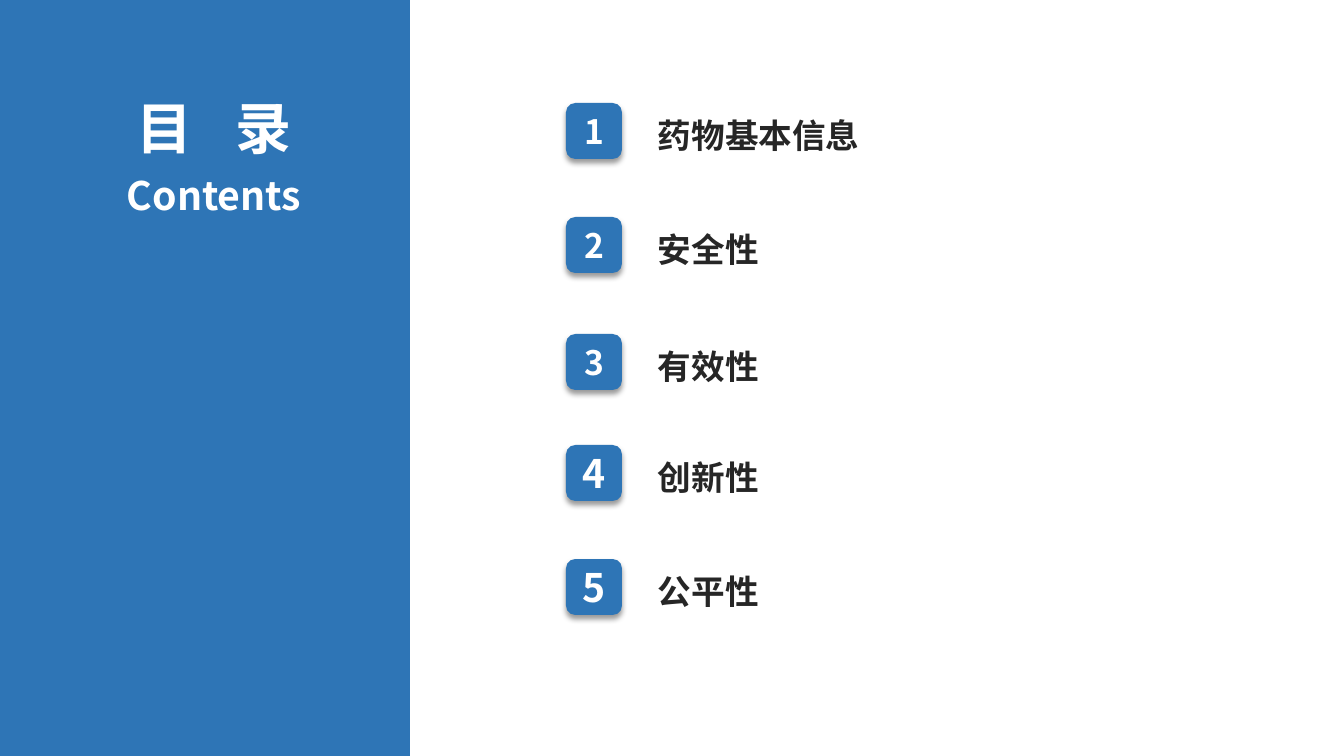
from lxml import etree
from pptx import Presentation, util as u
from pptx.dml.color import RGBColor
from pptx.enum import shapes, text
from pptx.oxml import parse_xml
from pptx.oxml.ns import nsdecls, qn

BLUE, WHITE, INK = "2E75B6", "FFFFFF", "262626"
CJK_FONT = "Noto Sans CJK SC"
SHADOW = f"""<a:effectLst {nsdecls("a")}>
  <a:outerShdw blurRad="50800" dist="38100" dir="5400000" algn="t" rotWithShape="0">
    <a:srgbClr val="000000"><a:alpha val="40000"/></a:srgbClr>
  </a:outerShdw>
</a:effectLst>"""


def px(*lengths):
    return [u.Inches(length / 100.8) for length in lengths]


def style_text(holder, size, color, align, font=CJK_FONT):
    frame = holder.text_frame
    frame.word_wrap = True
    frame.auto_size = text.MSO_AUTO_SIZE.NONE
    frame.vertical_anchor = text.MSO_ANCHOR.MIDDLE
    paragraph = frame.paragraphs[0]
    paragraph.alignment = align
    for run in paragraph.runs:
        run.font.name = font
        run.font.size = u.Pt(size)
        run.font.bold = True
        run.font.color.rgb = RGBColor.from_string(color)
        east_asian = etree.Element(qn("a:ea"), typeface=CJK_FONT)
        run.font._element.find(qn("a:latin")).addnext(east_asian)


prs = Presentation()
prs.slide_width, prs.slide_height = px(1344, 756)
slide = prs.slides.add_slide(prs.slide_layouts[5])
CENTER, LEFT = text.PP_ALIGN.CENTER, text.PP_ALIGN.LEFT

# Blue side panel with the heading in two languages
panel = slide.shapes.add_shape(shapes.MSO_SHAPE.RECTANGLE, *px(0, 0, 410, 756))
panel.shadow.inherit = False
panel.fill.solid()
panel.fill.fore_color.rgb = RGBColor.from_string(BLUE)
panel.line.fill.background()

heading = slide.shapes.title
panel._element.addnext(heading._element)  # the heading lies above the panel
heading.left, heading.top, heading.width, heading.height = px(40, 103, 348, 49)
for part in ("目 ", "录"):
    heading.text_frame.paragraphs[0].add_run().text = part
style_text(heading, 40, WHITE, CENTER, "Arial")
# Letter spacing widens the gap between the two characters
heading.text_frame.paragraphs[0].runs[0].font._element.set("spc", "1100")

subheading = slide.shapes.add_textbox(*px(40, 170, 348, 49))
subheading.text_frame.text = "Contents"
style_text(subheading, 28, WHITE, CENTER)

# Chapters: badge top, number size, name
chapters = [
    (103, 24, "药物基本信息"),
    (217, 24, "安全性"),
    (334, 24, "有效性"),
    (445, 28, "创新性"),
    (559, 28, "公平性"),
]
for number, (top, number_size, name) in enumerate(chapters, start=1):
    chapter = slide.shapes.add_group_shape()

    badge = chapter.shapes.add_shape(
        shapes.MSO_SHAPE.ROUNDED_RECTANGLE, *px(566, top, 56, 56))
    badge.fill.solid()
    badge.fill.fore_color.rgb = RGBColor.from_string(BLUE)
    badge.line.fill.background()
    badge._element.spPr.append(parse_xml(SHADOW))
    badge.text_frame.text = str(number)
    style_text(badge, number_size, WHITE, CENTER)

    label = chapter.shapes.add_textbox(*px(648, top - 24, 230, 112))
    label.text_frame.text = name
    style_text(label, 24, INK, LEFT)

prs.save("out.pptx")
